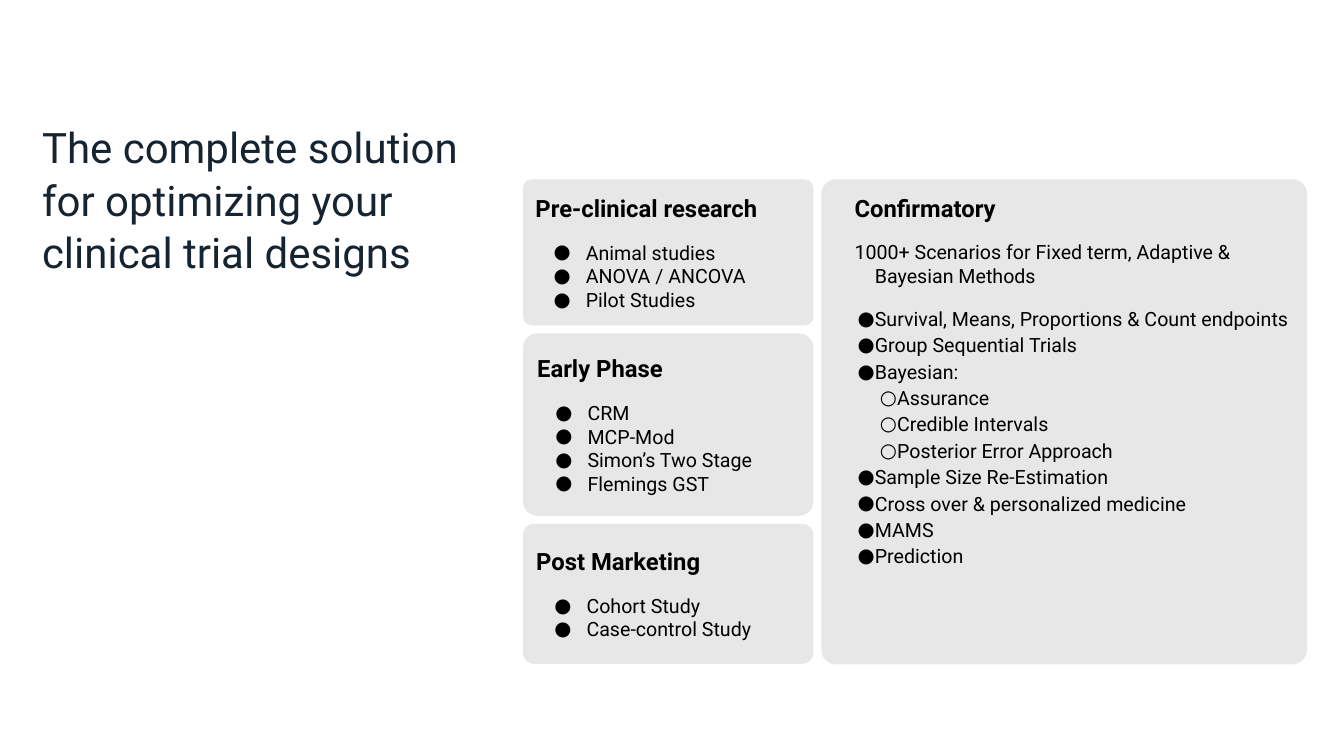
from lxml import etree
from pptx import Presentation
from pptx.dml.color import RGBColor
from pptx.enum.shapes import MSO_SHAPE
from pptx.enum.text import MSO_ANCHOR, PP_ALIGN
from pptx.oxml.ns import qn
from pptx.util import Cm, Pt

ROUNDED = MSO_SHAPE.ROUNDED_RECTANGLE
TOP, MIDDLE = MSO_ANCHOR.TOP, MSO_ANCHOR.MIDDLE
LEFT = PP_ALIGN.LEFT

FONT = "Roboto"
BLACK, NAVY, GREY = "000000", "152430", "E7E7E7"
GAP = 0.2
COLUMN_LEFT, COLUMN_TOP, COLUMN_WIDTH = 13.18, 4.52, 7.32
CONFIRMATORY_WIDTH, CONFIRMATORY_HEIGHT = 12.24, 12.22
HEADING_GAP = 13

# heading, items, height in cm, corner ratio
PHASES = [
    ("Pre-clinical research",
     ["Animal studies", "ANOVA / ANCOVA", "Pilot Studies"], 3.68, 0.06),
    ("Early Phase",
     ["CRM", "MCP-Mod", "Simon’s Two Stage", "Flemings GST"], 4.6, 0.08),
    ("Post Marketing", ["Cohort Study", "Case-control Study"], 3.53, 0.08),
]
# level, text
METHODS = [
    (0, "Survival, Means, Proportions & Count endpoints"),
    (0, "Group Sequential Trials"),
    (0, "Bayesian:"),
    (1, "Assurance"),
    (1, "Credible Intervals"),
    (1, "Posterior Error Approach"),
    (0, "Sample Size Re-Estimation"),
    (0, "Cross over & personalized medicine"),
    (0, "MAMS"),
    (0, "Prediction"),
]
# bullet, left margin and first-line indent in cm, by level
METHOD_STYLES = [("●", 0.99, -0.43), ("○", 1.5, -0.38)]


def color(value):
    return RGBColor.from_string(value)


def set_bullet(paragraph, character):
    properties = paragraph._p.get_or_add_pPr()
    bullet_color = etree.SubElement(properties, qn("a:buClr"))
    etree.SubElement(bullet_color, qn("a:srgbClr"), val=BLACK)
    etree.SubElement(properties, qn("a:buFont"), typeface=FONT)
    etree.SubElement(properties, qn("a:buChar"), char=character)


def add_paragraph(frame, text, size=14, bold=False, text_color=BLACK,
                  before=0, margin=0, indent=0, bullet=None, level=0):
    """Fill the empty first paragraph of the frame, or append a new one."""
    first = frame.paragraphs[0]
    paragraph = frame.add_paragraph() if first.runs else first
    paragraph.add_run().text = text
    paragraph.alignment = LEFT
    paragraph.level = level
    paragraph.space_before = Pt(before)
    properties = paragraph._p.get_or_add_pPr()
    properties.set("marL", str(Cm(margin)))
    properties.set("indent", str(Cm(indent)))
    if bullet:
        set_bullet(paragraph, bullet)
    font = paragraph.font
    font.name, font.size, font.bold = FONT, Pt(size), bold
    font.color.rgb = color(text_color)
    return paragraph


def prepare_frame(shape, anchor):
    frame = shape.text_frame
    frame.word_wrap = True
    frame.vertical_anchor = anchor
    frame.margin_left = frame.margin_right = Cm(0.25)
    frame.margin_top = frame.margin_bottom = Cm(0.25)
    return frame


def add_card(slide, left, top, width, height, corner, anchor):
    """Add a grey rounded card and return its text frame."""
    card = slide.shapes.add_shape(ROUNDED, Cm(left), Cm(top), Cm(width), Cm(height))
    card.adjustments[0] = corner
    card.shadow.inherit = False
    card.fill.solid()
    card.fill.fore_color.rgb = color(GREY)
    card.line.fill.background()
    return prepare_frame(card, anchor)


def add_title(slide):
    box = slide.shapes.add_textbox(Cm(0.81), Cm(2.74), Cm(11.51), Cm(4.9))
    paragraph = add_paragraph(
        prepare_frame(box, TOP),
        "The complete solution for optimizing your clinical trial designs",
        size=30, text_color=NAVY)
    paragraph.line_spacing = 1.05


def add_phases(slide):
    top = COLUMN_TOP
    for heading, items, height, corner in PHASES:
        frame = add_card(slide, COLUMN_LEFT, top, COLUMN_WIDTH, height, corner, MIDDLE)
        add_paragraph(frame, heading, size=17, bold=True)
        for index, item in enumerate(items):
            add_paragraph(frame, item, before=0 if index else HEADING_GAP,
                          margin=1.27, indent=-0.81, bullet="●")
        top += height + GAP


def add_confirmatory(slide):
    frame = add_card(slide, COLUMN_LEFT + COLUMN_WIDTH + GAP, COLUMN_TOP,
                     CONFIRMATORY_WIDTH, CONFIRMATORY_HEIGHT, 0.03, TOP)
    add_paragraph(frame, "Confirmatory", size=17, bold=True, margin=0.99, indent=-0.51)
    add_paragraph(frame, "1000+ Scenarios for Fixed term, Adaptive & Bayesian Methods",
                  before=HEADING_GAP, margin=0.99, indent=-0.51)
    for index, (level, text) in enumerate(METHODS):
        bullet, margin, indent = METHOD_STYLES[level]
        add_paragraph(frame, text, before=2 if index else HEADING_GAP + 1,
                      margin=margin, indent=indent, bullet=bullet, level=level)


def main():
    presentation = Presentation()
    presentation.slide_width, presentation.slide_height = Cm(33.87), Cm(19.05)
    slide = presentation.slides.add_slide(presentation.slide_layouts[6])
    add_title(slide)
    add_phases(slide)
    add_confirmatory(slide)
    presentation.save("out.pptx")


if __name__ == "__main__":
    main()
